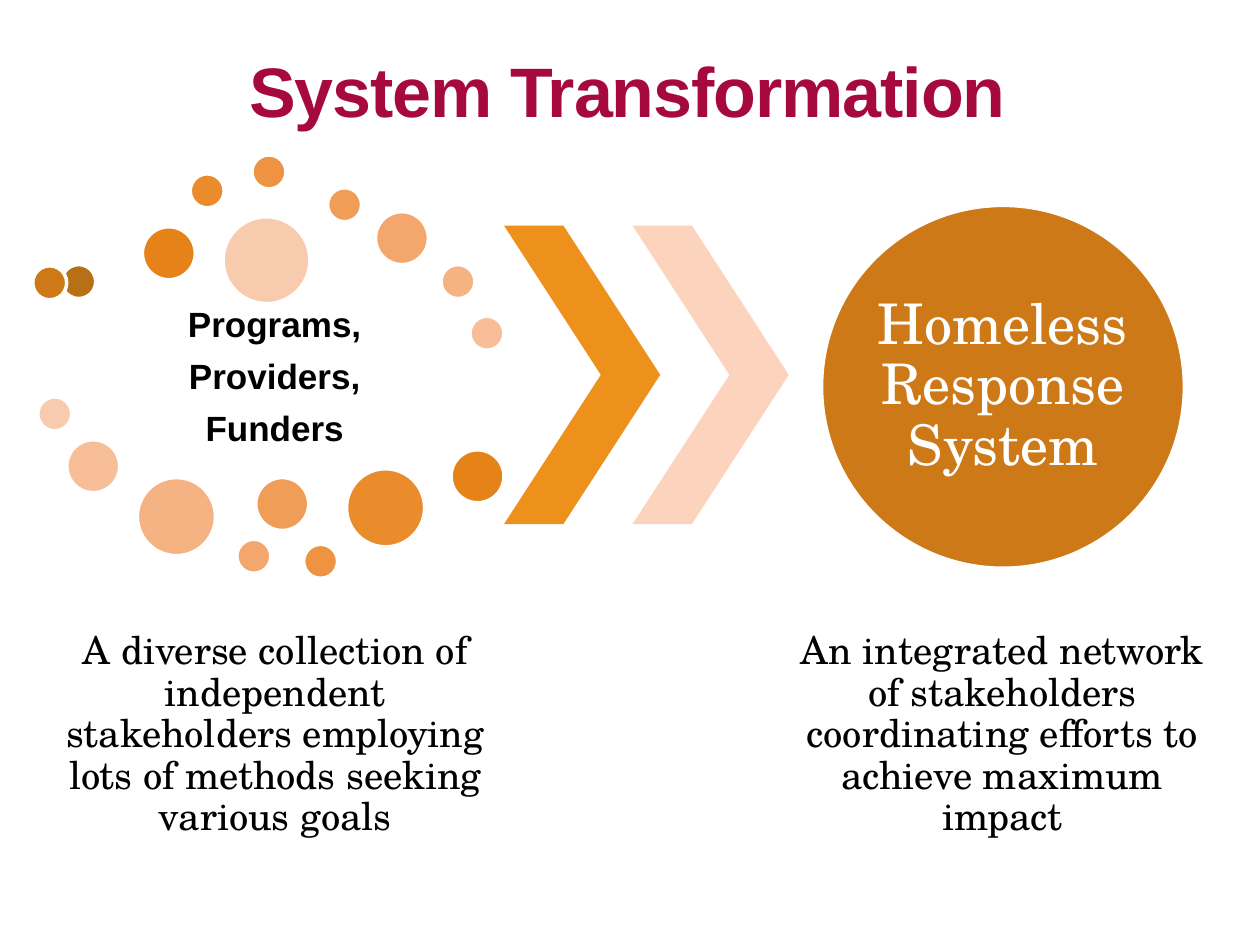
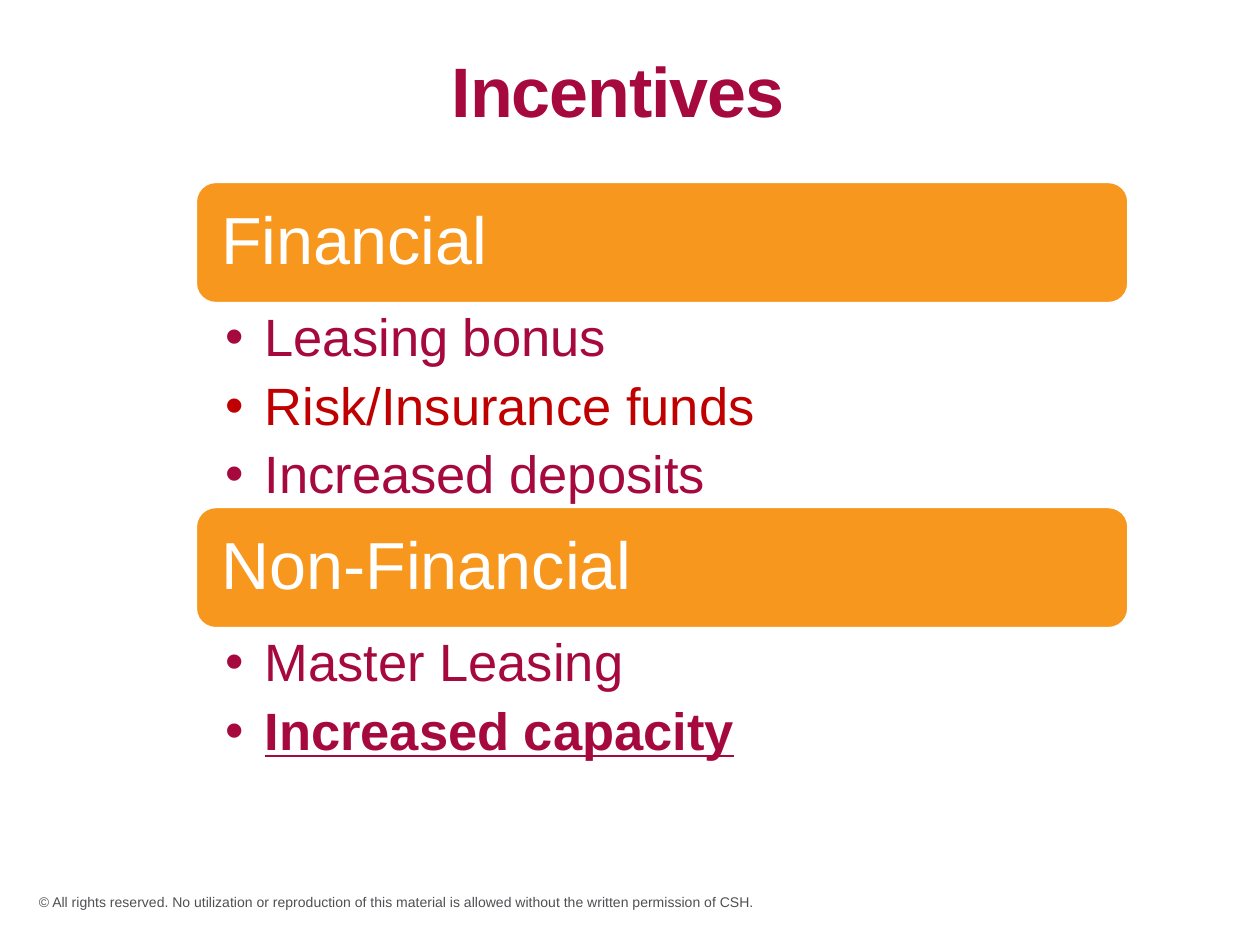
"""Builds two slides on system transformation and landlord incentives."""
from dataclasses import dataclass
from typing import NamedTuple, Optional

from lxml.etree import SubElement
from pptx import Presentation
from pptx.dml.color import RGBColor
from pptx.enum.shapes import MSO_SHAPE
from pptx.enum.text import MSO_ANCHOR, PP_ALIGN
from pptx.oxml.ns import qn
from pptx.util import Inches, Pt


@dataclass(frozen=True)
class Theme:
    sans: str = "Arial"
    serif: str = "TeX Gyre Schola"
    crimson: str = "A6093D"
    red: str = "C00000"
    black: str = "000000"
    white: str = "FFFFFF"
    grey: str = "4F5053"
    band: str = "F8971D"
    system: str = "CE7917"
    chevrons: tuple = ("ED901C", "FCD4BD")
    dots: tuple = ("B77015", "CE7917", "E58218", "EA8B2C", "ED9341",
                   "F09D57", "F3A76C", "F5B282", "F7BE98", "F9CBAE")
    title_size: float = 40
    heading_size: float = 38
    system_size: float = 32
    bullet_size: float = 30
    caption_size: float = 22
    label_size: float = 20
    footer_size: float = 8
    line_spacing: float = 0.9
    wide_gap: float = 0.4
    narrow_gap: float = 0.23


THEME = Theme()


class Box(NamedTuple):
    left: float
    top: float
    width: float
    height: float

    def lengths(self) -> list:
        return [Inches(value) for value in self]


class Style(NamedTuple):
    size: float
    color: str
    font: str = THEME.sans
    bold: bool = False
    align: PP_ALIGN = PP_ALIGN.CENTER
    anchor: MSO_ANCHOR = MSO_ANCHOR.MIDDLE
    insets: tuple = (0.03, 0.03, 0.03, 0.03)
    line_spacing: float = THEME.line_spacing
    gap: float = THEME.wide_gap
    tracking: Optional[int] = None


class Dot(NamedTuple):
    left: float
    top: float
    size: float


class Bullet(NamedTuple):
    text: str
    color: str = THEME.crimson
    stressed: bool = False


class Section(NamedTuple):
    heading: str
    top: float
    bullets: tuple


PAGE_INSETS = (0.1, 0.05, 0.1, 0.05)
TITLE = Style(THEME.title_size, THEME.crimson, bold=True, insets=PAGE_INSETS,
              gap=0, tracking=-60)
FOOTER = Style(THEME.footer_size, THEME.grey, align=PP_ALIGN.LEFT,
               insets=PAGE_INSETS, line_spacing=1, gap=0)
LABEL = Style(THEME.label_size, THEME.black, bold=True)
CAPTION = Style(THEME.caption_size, THEME.black, THEME.serif)
SYSTEM = Style(THEME.system_size, THEME.white, THEME.serif, insets=(0, 0, 0, 0))
HEADING = Style(THEME.heading_size, THEME.white, align=PP_ALIGN.LEFT,
                insets=(0.16, 0.16, 0.16, 0.16))
BULLET = Style(THEME.bullet_size, THEME.crimson, align=PP_ALIGN.LEFT,
               anchor=MSO_ANCHOR.TOP, insets=(0.24, 0.05, 0.3, 0.05),
               gap=THEME.narrow_gap)

SMALL, MEDIUM, LARGE, LARGEST = 0.27, 0.42, 0.62, 0.69
UPPER_DOTS = (
    Dot(0.49, 2.1, SMALL), Dot(0.26, 2.11, SMALL), Dot(1.13, 1.8, MEDIUM),
    Dot(1.51, 1.38, SMALL), Dot(2, 1.23, SMALL), Dot(2.6, 1.49, SMALL),
    Dot(2.98, 1.68, MEDIUM), Dot(3.5, 2.1, SMALL), Dot(3.73, 2.51, SMALL),
    Dot(1.77, 1.72, LARGEST),
)
LOWER_DOTS = (
    Dot(0.3, 3.15, SMALL), Dot(0.53, 3.49, MEDIUM), Dot(1.09, 3.79, LARGE),
    Dot(1.88, 4.28, SMALL), Dot(2.03, 3.79, MEDIUM), Dot(2.41, 4.32, SMALL),
    Dot(2.75, 3.72, LARGE), Dot(3.58, 3.57, MEDIUM),
)
CAPTIONS = (
    (0.49, "A diverse collection of independent stakeholders employing "
           "lots of methods seeking various goals"),
    (6.26, "An integrated network of stakeholders coordinating efforts to "
           "achieve maximum impact"),
)
SECTIONS = (
    Section("Financial", 1.44, (
        Bullet("Leasing bonus"),
        Bullet("Risk/Insurance funds", THEME.red),
        Bullet("Increased deposits"),
    )),
    Section("Non-Financial", 4.02, (
        Bullet("Master Leasing"),
        Bullet("Increased capacity", stressed=True),
    )),
)
BAND_LEFT, BAND_WIDTH, BAND_HEIGHT = 1.55, 7.41, 0.97
BULLET_INDENT = 0.31


def write(shape, text: str, style: Style):
    """Fill a shape with styled text, one paragraph a line."""
    frame = shape.text_frame
    frame.text = text
    frame.word_wrap = True
    frame.vertical_anchor = style.anchor
    (frame.margin_left, frame.margin_top,
     frame.margin_right, frame.margin_bottom) = map(Inches, style.insets)
    for paragraph in frame.paragraphs:
        paragraph.alignment = style.align
        paragraph.line_spacing = style.line_spacing
        paragraph.space_after = Pt(round(style.size * style.gap, 1))
        for run in paragraph.runs:
            run.font.name = style.font
            run.font.size = Pt(style.size)
            run.font.bold = style.bold
            run.font.color.rgb = RGBColor.from_string(style.color)
            if style.tracking is not None:
                run.font._element.set("spc", str(style.tracking))
    return frame


def add_text(slide, box: Box, text: str, style: Style):
    return write(slide.shapes.add_textbox(*box.lengths()), text, style)


def add_filled(slide, kind: MSO_SHAPE, box: Box, fill: str, outlined: bool = True):
    shape = slide.shapes.add_shape(kind, *box.lengths())
    shape.shadow.inherit = False
    shape.fill.solid()
    shape.fill.fore_color.rgb = RGBColor.from_string(fill)
    if outlined:
        shape.line.color.rgb = RGBColor.from_string(THEME.white)
        shape.line.width = Pt(2)
    else:
        shape.line.fill.background()
    return shape


def add_slide(deck, title: str):
    slide = deck.slides.add_slide(deck.slide_layouts[6])
    add_text(slide, Box(1, 0.37, 7.96, 0.77), title, TITLE)
    return slide


def add_dots(slide, dots: tuple, colors: tuple) -> None:
    for dot, color in zip(dots, colors):
        add_filled(slide, MSO_SHAPE.OVAL,
                   Box(dot.left, dot.top, dot.size, dot.size), color)


def add_section(slide, section: Section) -> None:
    band = add_filled(slide, MSO_SHAPE.ROUNDED_RECTANGLE,
                      Box(BAND_LEFT, section.top, BAND_WIDTH, BAND_HEIGHT), THEME.band)
    write(band, section.heading, HEADING)
    bullets = section.bullets
    area = Box(BAND_LEFT, section.top + 0.98, BAND_WIDTH, 0.53 * len(bullets))
    frame = add_text(slide, area, "\n".join(b.text for b in bullets), BULLET)
    for paragraph, bullet in zip(frame.paragraphs, bullets):
        properties = paragraph._p.get_or_add_pPr()
        properties.set("marL", str(Inches(BULLET_INDENT)))
        properties.set("indent", str(-Inches(BULLET_INDENT)))
        SubElement(properties, qn("a:buFont")).set("typeface", THEME.sans)
        SubElement(properties, qn("a:buChar")).set("char", "•")
        font = paragraph.runs[0].font
        font.color.rgb = RGBColor.from_string(bullet.color)
        font.bold = font.underline = bullet.stressed


def build_transformation(deck) -> None:
    slide = add_slide(deck, "System Transformation")
    add_text(slide, Box(0.49, 2.44, 3.38, 1.12), "Programs,\nProviders,\nFunders", LABEL)
    add_dots(slide, UPPER_DOTS, THEME.dots)
    add_dots(slide, LOWER_DOTS, THEME.dots[::-1])
    for index, color in enumerate(THEME.chevrons):
        chevron = add_filled(slide, MSO_SHAPE.CHEVRON,
                             Box(4 + 1.02 * index, 1.79, 1.24, 2.37), color, False)
        chevron.adjustments[0] = 0.62
    system = add_filled(slide, MSO_SHAPE.OVAL, Box(6.52, 1.63, 2.88, 2.88), THEME.system)
    write(system, "Homeless Response System", SYSTEM)
    for left, caption in CAPTIONS:
        add_text(slide, Box(left, 4.79, 3.39, 2.09), caption, CAPTION)


def build_incentives(deck) -> None:
    slide = add_slide(deck, "Incentives ")
    add_text(slide, Box(0.21, 6.96, 8.13, 0.4),
             "© All rights reserved. No utilization or reproduction of this material "
             "is allowed without the written permission of CSH.", FOOTER)
    for section in SECTIONS:
        add_section(slide, section)


def main() -> None:
    deck = Presentation()
    deck.slide_width, deck.slide_height = Inches(10), Inches(7.5)
    build_transformation(deck)
    build_incentives(deck)
    deck.save("out.pptx")


if __name__ == "__main__":
    main()
